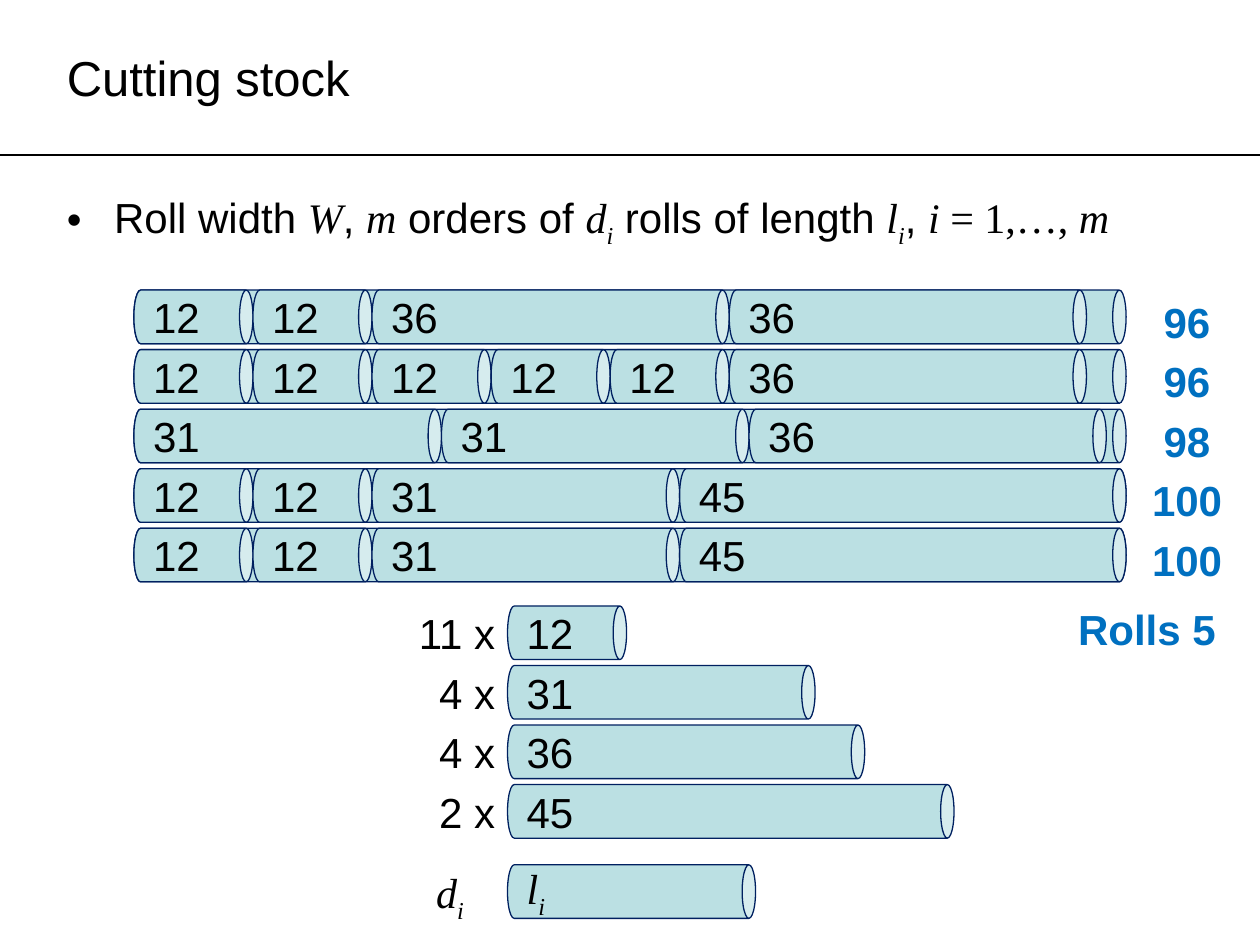
from lxml import etree
from pptx import Presentation
from pptx.dml.color import RGBColor
from pptx.enum.shapes import MSO_CONNECTOR, MSO_SHAPE
from pptx.enum.text import MSO_ANCHOR, MSO_AUTO_SIZE, PP_ALIGN
from pptx.oxml.ns import qn
from pptx.util import Pt

BLACK, BLUE, NAVY, TEAL = "000000", "0070C0", "002060", "BBE0E3"
SANS = {"name": "Arial", "italic": False}
SERIF = {"name": "Times New Roman", "italic": False}
MATH = {"name": "Times New Roman", "italic": True}
SUBSCRIPT = {**MATH, "baseline": "-25000"}

UNIT = 5.67  # points per unit of roll length
PITCH = 34.02
ROLL_HEIGHT = 30.6
ROLL_LEFT, ROLL_TOP = 76.5, 165.8
ORDER_LEFT, ORDER_TOP = 290, 346.3


def write(shape, runs, align=PP_ALIGN.LEFT, color=BLACK, size=24, bold=False):
    """Fill the first paragraph with (text, format values) runs."""
    paragraph = shape.text_frame.paragraphs[0]
    paragraph.alignment = align
    for text, style in runs:
        run = paragraph.add_run()
        run.text = text
        run.font.color.rgb = RGBColor.from_string(color)
        for name, value in {**style, "size": Pt(size), "bold": bold}.items():
            if name == "baseline":
                run._r.get_or_add_rPr().set(name, value)
            else:
                setattr(run.font, name, value)


def add_roll(left, top, length, runs=()):
    """Add an upright can turned on its side, with its text kept level."""
    width = length * UNIT
    shift = (width - ROLL_HEIGHT) / 2
    roll = slide.shapes.add_shape(MSO_SHAPE.CAN, Pt(left + shift), Pt(top - shift),
                                  Pt(ROLL_HEIGHT), Pt(width))
    roll.rotation = 90
    roll.shadow.inherit = False
    roll.fill.solid()
    roll.fill.fore_color.rgb = RGBColor.from_string(TEAL)
    roll.line.color.rgb = RGBColor.from_string(NAVY)
    roll.line.width = Pt(0.75)
    if runs:
        roll.text_frame._txBody.bodyPr.set("vert", "vert270")
        write(roll, runs)


presentation = Presentation()
presentation.slide_width, presentation.slide_height = Pt(720), Pt(540)
slide = presentation.slides.add_slide(presentation.slide_layouts[1])

# Title, rule and bullet
title, body = slide.placeholders
for placeholder, top, height, anchor in ((title, 5, 78, MSO_ANCHOR.MIDDLE),
                                         (body, 106, 423, MSO_ANCHOR.TOP)):
    placeholder.left, placeholder.top = Pt(31), Pt(top)
    placeholder.width, placeholder.height = Pt(658), Pt(height)
    placeholder.text_frame.vertical_anchor = anchor
    placeholder.text_frame.auto_size = MSO_AUTO_SIZE.NONE
write(title, [("Cutting stock", SANS)], size=28)

rule = slide.shapes.add_connector(MSO_CONNECTOR.STRAIGHT, Pt(0), Pt(88.6), Pt(720), Pt(88.6))
rule.line.color.rgb = RGBColor.from_string(BLACK)
rule.line.width = Pt(0.75)
etree.SubElement(rule._element.spPr, qn("a:effectLst"))

bullet = body.text_frame.paragraphs[0]
bullet.space_before = Pt(0)
properties = bullet._p.get_or_add_pPr()
properties.set("marL", str(Pt(27)))
properties.set("indent", str(-Pt(27)))
etree.SubElement(properties, qn("a:buChar")).set("char", "•")
write(body, [
    ("Roll width ", SANS), ("W", MATH), (", ", SANS), ("m", MATH),
    (" orders of ", SANS), ("d", MATH), ("i", SUBSCRIPT),
    (" rolls of length ", SANS), ("l", MATH), ("i", SUBSCRIPT),
    (", ", SANS), ("i ", MATH), ("= 1,…, ", SERIF), ("m", MATH),
])

# Labels are gathered as (left, top, width, runs, alignment, colour, bold)
labels = []

# Cutting patterns, one full roll each
patterns = [
    [12, 12, 36, 36],
    [12, 12, 12, 12, 12, 36],
    [31, 31, 36],
    [12, 12, 31, 45],
    [12, 12, 31, 45],
]
for row, pieces in enumerate(patterns):
    top = ROLL_TOP + row * PITCH
    add_roll(ROLL_LEFT, top, 100)
    left = ROLL_LEFT
    for piece in pieces:
        add_roll(left, top, piece, [(str(piece), SANS)])
        left += piece * UNIT
    used = str(sum(pieces))
    width = 54.7 if len(used) == 3 else 41.6
    labels.append((678.6 - width / 2, top, width, [(used, SANS)], PP_ALIGN.LEFT, BLUE, True))
labels.append((609, 341.3, 93.6, [(f"Rolls {len(patterns)}", SANS)], PP_ALIGN.LEFT, BLUE, True))

# Orders: demand and length
for row, (demand, length) in enumerate([(11, 12), (4, 31), (4, 36), (2, 45)]):
    top = ORDER_TOP + row * PITCH
    add_roll(ORDER_LEFT, top, length, [(str(length), SANS)])
    width = 60.2 if demand > 9 else 46.8
    labels.append((ORDER_LEFT - width, top - 2.6, width, [(f"{demand} x", SANS)],
                   PP_ALIGN.RIGHT, BLACK, False))
add_roll(ORDER_LEFT, 494.2, 25, [("l", MATH), ("i", SUBSCRIPT)])
labels.append((241.2, 491.8, 31, [("d", MATH), ("i", SUBSCRIPT)], PP_ALIGN.RIGHT, BLACK, False))

for left, top, width, runs, align, color, bold in labels:
    label = slide.shapes.add_textbox(Pt(left), Pt(top), Pt(width), Pt(36))
    label.text_frame.word_wrap = False
    label.text_frame.auto_size = MSO_AUTO_SIZE.SHAPE_TO_FIT_TEXT
    write(label, runs, align, color, bold=bold)

presentation.save("out.pptx")
